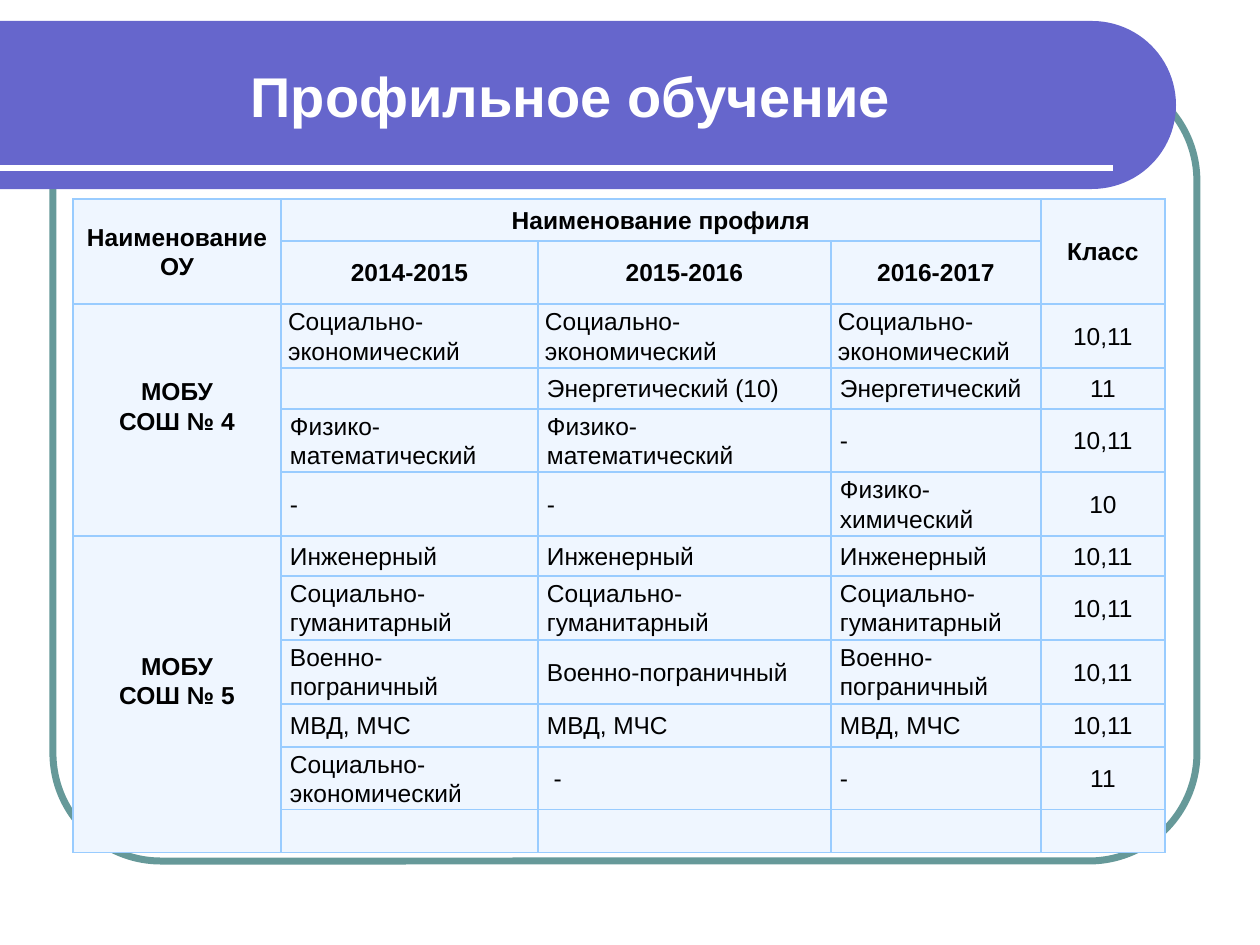
"""Build the slide about specialised education with its table of profiles."""
import math

import lxml.etree
import pptx
import pptx.dml.color
import pptx.enum.shapes
import pptx.enum.text
import pptx.oxml.ns
import pptx.util

EMU_PER_PX = 914400 / 126
FONT = "Arial"
COLORS = {
    "banner": "6666CC",
    "frame": "669999",
    "white": "FFFFFF",
    "text": "000000",
    "cell": "EFF6FF",
    "border": "99CCFF",
}
ALIGN = pptx.enum.text.PP_ALIGN
COLUMN_ALIGNMENTS = [ALIGN.CENTER, ALIGN.JUSTIFY, ALIGN.JUSTIFY, ALIGN.LEFT, ALIGN.CENTER]
COLUMN_WIDTHS = [208, 257, 293, 210, 124]
ROW_HEIGHTS = [42, 59, 64, 41, 60, 64, 40, 64, 64, 43, 58, 43]
HEADER_ROWS = 2
MERGES = [((0, 0), (1, 0)), ((0, 1), (0, 3)), ((0, 4), (1, 4)), ((2, 0), (5, 0)), ((6, 0), (11, 0))]
ROWS = [
    ["Наименование ОУ", "Наименование профиля", "", "", "Класс"],
    ["", "2014-2015", "2015-2016", "2016-2017", ""],
    ["МОБУ\nСОШ № 4", *["Социально-экономический"] * 3, "10,11"],
    ["", "", "Энергетический (10)", "Энергетический", "11"],
    ["", "Физико-математический", "Физико-математический", "-", "10,11"],
    ["", "-", "-", "Физико-химический", "10"],
    ["МОБУ\nСОШ № 5", *["Инженерный"] * 3, "10,11"],
    ["", *["Социально-гуманитарный"] * 3, "10,11"],
    ["", *["Военно-пограничный"] * 3, "10,11"],
    ["", *["МВД, МЧС"] * 3, "10,11"],
    ["", "Социально-экономический", " -", "-", "11"],
    [""] * 5,
]


def px(length):
    """Turn pixels into EMU."""
    return pptx.util.Emu(round(length * EMU_PER_PX))


def rgb(name):
    """Look up a named colour."""
    return pptx.dml.color.RGBColor.from_string(COLORS[name])


def format_text(text_frame, size, color, bold, alignment, spacing=1.0):
    """Format every paragraph and run of a text frame."""
    for paragraph in text_frame.paragraphs:
        paragraph.alignment = alignment
        paragraph.line_spacing = spacing
        for run in paragraph.runs:
            run.font.name = FONT
            run.font.size = pptx.util.Pt(size)
            run.font.bold = bold
            run.font.color.rgb = rgb(color)


def add_frame(slide, left, top, width, height):
    """Add the rounded outline behind the content."""
    kind = pptx.enum.shapes.MSO_SHAPE.ROUNDED_RECTANGLE
    shape = slide.shapes.add_shape(kind, px(left), px(top), px(width), px(height))
    shape.adjustments[0] = 0.137
    shape.shadow.inherit = False
    shape.fill.background()
    shape.line.color.rgb = rgb("frame")
    shape.line.width = pptx.util.Pt(4)


def add_banner(slide, top, right, radius, steps=48):
    """Add the band whose right end is a half circle."""
    center_x, center_y = right - radius, top + radius
    angles = [math.pi * (step / steps - 0.5) for step in range(steps + 1)]
    arc = [(px(center_x + radius * math.cos(angle)), px(center_y + radius * math.sin(angle)))
           for angle in angles]
    builder = slide.shapes.build_freeform(0, px(top))
    builder.add_line_segments([*arc, (0, px(top + 2 * radius))], close=True)
    shape = builder.convert_to_shape()
    shape.shadow.inherit = False
    shape.fill.solid()
    shape.fill.fore_color.rgb = rgb("banner")
    shape.line.fill.background()


def add_rule(slide, right, y):
    """Add the white line under the title."""
    kind = pptx.enum.shapes.MSO_CONNECTOR.STRAIGHT
    connector = slide.shapes.add_connector(kind, 0, px(y), px(right), px(y))
    connector.line.color.rgb = rgb("white")
    connector.line.width = pptx.util.Pt(3)
    properties = connector._element.spPr
    lxml.etree.SubElement(properties, pptx.oxml.ns.qn("a:effectLst"))


def add_title(slide, text, left, top, width, height):
    """Add the title text."""
    text_frame = slide.shapes.add_textbox(px(left), px(top), px(width), px(height)).text_frame
    text_frame.word_wrap = True
    text_frame.vertical_anchor = pptx.enum.text.MSO_ANCHOR.MIDDLE
    text_frame.text = text
    format_text(text_frame, 32, "white", True, ALIGN.CENTER)


def add_borders(cell):
    """Draw a thin line on all four sides of a cell."""
    properties = cell._tc.get_or_add_tcPr()
    for side in ("lnL", "lnR", "lnT", "lnB"):
        line = lxml.etree.SubElement(properties, pptx.oxml.ns.qn(f"a:{side}"), w="12700")
        fill = lxml.etree.SubElement(line, pptx.oxml.ns.qn("a:solidFill"))
        lxml.etree.SubElement(fill, pptx.oxml.ns.qn("a:srgbClr"), val=COLORS["border"])


def fill_cell(cell, text, row, column):
    """Set the text and look of one table cell."""
    is_header = row < HEADER_ROWS
    is_school = column == 0 and not is_header
    add_borders(cell)
    cell.fill.solid()
    cell.fill.fore_color.rgb = rgb("cell")
    cell.margin_left = cell.margin_right = px(7 if row <= HEADER_ROWS else 9)
    cell.margin_top = 0
    cell.margin_bottom = px(28 if is_school and text else 0)
    cell.vertical_anchor = pptx.enum.text.MSO_ANCHOR.MIDDLE
    if text:
        cell.text_frame.text = text
        alignment = ALIGN.CENTER if is_header else COLUMN_ALIGNMENTS[column]
        format_text(cell.text_frame, 14, "text", is_header or column == 0, alignment, 1.07)


def add_profile_table(slide, left, top):
    """Add the table of profiles by school and year."""
    frame = slide.shapes.add_table(len(ROWS), len(COLUMN_WIDTHS), px(left), px(top),
                                   px(sum(COLUMN_WIDTHS)), px(sum(ROW_HEIGHTS)))
    table = frame.table
    table.first_row = table.horz_banding = False
    for column, width in zip(table.columns, COLUMN_WIDTHS):
        column.width = px(width)
    for row, height in zip(table.rows, ROW_HEIGHTS):
        row.height = px(height)
    for row, texts in enumerate(ROWS):
        for column, text in enumerate(texts):
            fill_cell(table.cell(row, column), text, row, column)
    for first, last in MERGES:
        table.cell(*first).merge(table.cell(*last))


def main():
    """Build and save the presentation."""
    presentation = pptx.Presentation()
    presentation.slide_width, presentation.slide_height = px(1260), px(945)
    slide = presentation.slides.add_slide(presentation.slide_layouts[6])
    add_frame(slide, 53, 73, 1144, 788)
    add_banner(slide, 21, 1176, 84)
    add_rule(slide, 1113, 168)
    add_title(slide, "Профильное обучение ", 26, 32, 1105, 126)
    add_profile_table(slide, 73, 199)
    presentation.save("out.pptx")


if __name__ == "__main__":
    main()
